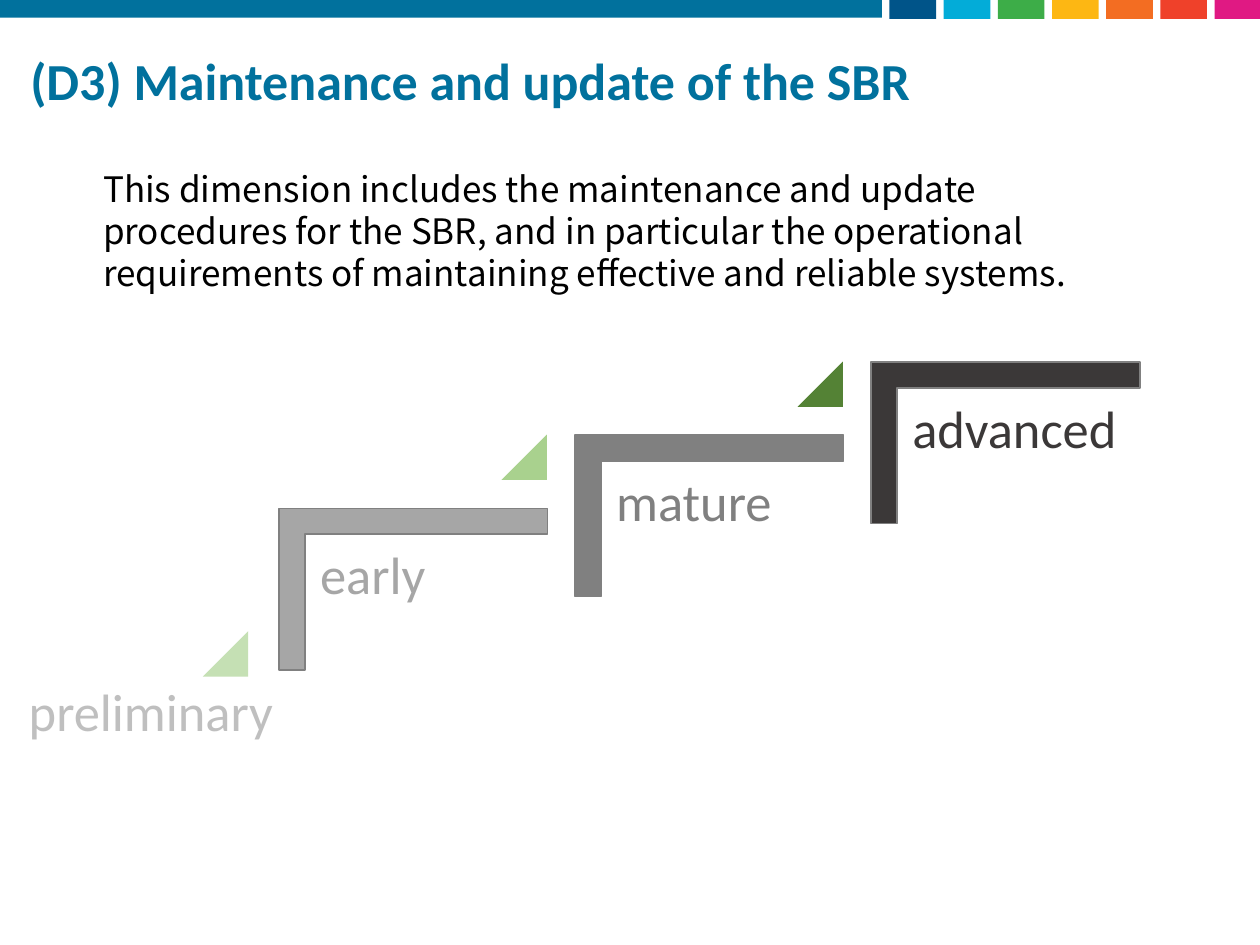
"""Build the slide on the maturity steps for maintaining and updating the SBR."""
import dataclasses
import typing

import pptx
import pptx.dml.color
import pptx.enum.shapes
import pptx.enum.text
import pptx.util

Inches = pptx.util.Inches
Pt = pptx.util.Pt
MSO_SHAPE = pptx.enum.shapes.MSO_SHAPE
MSO_ANCHOR = pptx.enum.text.MSO_ANCHOR
MSO_AUTO_SIZE = pptx.enum.text.MSO_AUTO_SIZE
PP_ALIGN = pptx.enum.text.PP_ALIGN

COLORS = {
    "brand": "01719D", "navy": "005489", "sky": "03ACD8", "leaf": "3DAD48",
    "amber": "FDB713", "orange": "F36D22", "red": "EF412A", "pink": "E01983",
    "text": "000000", "outline": "808080",
    "preliminary": "BFBFBF", "early": "A6A6A6", "mature": "808080", "advanced": "3B3838",
    "to_early": "C5E0B4", "to_mature": "A9D18E", "to_advanced": "548235",
}
TABS = ("navy", "sky", "leaf", "amber", "orange", "red", "pink")
TAB_LEFT, TAB_PITCH = 7.06, 0.43
STEP_LEFT, STEP_TOP = 2.64, 3.61
STEP_RUN, STEP_RISE = 2.35, 0.58


@dataclasses.dataclass(frozen=True)
class Box:
    """Position and size in inches."""
    left: float
    top: float
    width: float
    height: float

    def lengths(self) -> tuple:
        """Return the four values as lengths."""
        return tuple(Inches(value) for value in dataclasses.astuple(self))


@dataclasses.dataclass(frozen=True)
class Step:
    """A maturity level and the marker leading to the next one."""
    label: str
    marker: typing.Optional[str] = None


STEPS = (Step("early", "to_mature"), Step("mature", "to_advanced"), Step("advanced"))


def rgb(name: str) -> pptx.dml.color.RGBColor:
    """Look up a named colour."""
    return pptx.dml.color.RGBColor.from_string(COLORS[name])


def add_solid(slide, kind, box: Box, color: str, outline: typing.Optional[str] = None):
    """Add a filled shape, outlined only when asked."""
    solid = slide.shapes.add_shape(kind, *box.lengths())
    solid.shadow.inherit = False
    solid.fill.solid()
    solid.fill.fore_color.rgb = rgb(color)
    if outline:
        solid.line.color.rgb = rgb(outline)
        solid.line.width = Pt(1)
    else:
        solid.line.fill.background()
    return solid


def write(frame, text: str, color: str, size: float, font: str = "Calibri",
          spacing=None, bold: bool = False) -> None:
    """Fill a text frame with one formatted, left-aligned paragraph."""
    frame.word_wrap = True
    frame.text = text
    paragraph = frame.paragraphs[0]
    paragraph.alignment = PP_ALIGN.LEFT
    paragraph.line_spacing = spacing
    for run in paragraph.runs:
        run.font.name = font
        run.font.size = Pt(size)
        run.font.bold = bold
        run.font.color.rgb = rgb(color)


def add_marker(slide, left: float, top: float, color: str) -> None:
    """Add a right-angled triangle pointing up the stairs."""
    marker = add_solid(slide, MSO_SHAPE.ISOSCELES_TRIANGLE, Box(left, top, 0.36, 0.36), color)
    marker.adjustments[0] = 1.0


def add_step(slide, index: int, step: Step) -> None:
    """Add one stair with its label and marker."""
    left = STEP_LEFT + index * STEP_RUN
    top = STEP_TOP - index * STEP_RISE
    stair = add_solid(slide, MSO_SHAPE.CORNER, Box(left, top, 1.28, 2.13), step.label, "outline")
    stair.rotation = 90
    stair.adjustments[0] = stair.adjustments[1] = 0.16
    label = slide.shapes.add_textbox(*Box(left - 0.22, top + 0.63, 1.92, 1.68).lengths())
    frame = label.text_frame
    frame.margin_left = frame.margin_right = Inches(0.12)
    frame.margin_top = frame.margin_bottom = Inches(0.12)
    write(frame, step.label, step.label, 30, spacing=0.9)
    if step.marker:
        add_marker(slide, left + 1.34, top - 0.16, step.marker)


def main() -> None:
    """Build and save the presentation."""
    deck = pptx.Presentation()
    deck.slide_width, deck.slide_height = Inches(10), Inches(7.5)
    slide = deck.slides.add_slide(deck.slide_layouts[5])

    add_solid(slide, MSO_SHAPE.RECTANGLE, Box(0, 0, 7, 0.14), "brand")
    for index, color in enumerate(TABS):
        tab = Box(TAB_LEFT + index * TAB_PITCH, 0, 0.37, 0.15)
        add_solid(slide, MSO_SHAPE.RECTANGLE, tab, color)

    title = slide.shapes.title
    title.left, title.top, title.width, title.height = Box(0.14, 0.33, 7.23, 0.66).lengths()
    title.text_frame.auto_size = MSO_AUTO_SIZE.NONE
    title.text_frame.vertical_anchor = MSO_ANCHOR.MIDDLE
    write(title.text_frame, "(D3) Maintenance and update of the SBR", "brand", 29.7,
          spacing=0.9, bold=True)

    description = slide.shapes.add_textbox(*Box(0.72, 1.28, 8.34, 1.11).lengths())
    description.text_frame.auto_size = MSO_AUTO_SIZE.SHAPE_TO_FIT_TEXT
    write(description.text_frame,
          "This dimension includes the maintenance and update procedures for the SBR, "
          "and in particular the operational requirements of maintaining effective "
          "and reliable systems.",
          "text", 20, font="Noto Sans CJK JP", spacing=Pt(24))

    for index, step in enumerate(STEPS):
        add_step(slide, index, step)

    start = slide.shapes.add_textbox(*Box(0.13, 5.34, 2.54, 0.61).lengths())
    start.text_frame.auto_size = MSO_AUTO_SIZE.SHAPE_TO_FIT_TEXT
    write(start.text_frame, "preliminary", "preliminary", 30)
    add_marker(slide, 1.61, 5.01, "to_early")

    deck.save("out.pptx")


if __name__ == "__main__":
    main()
